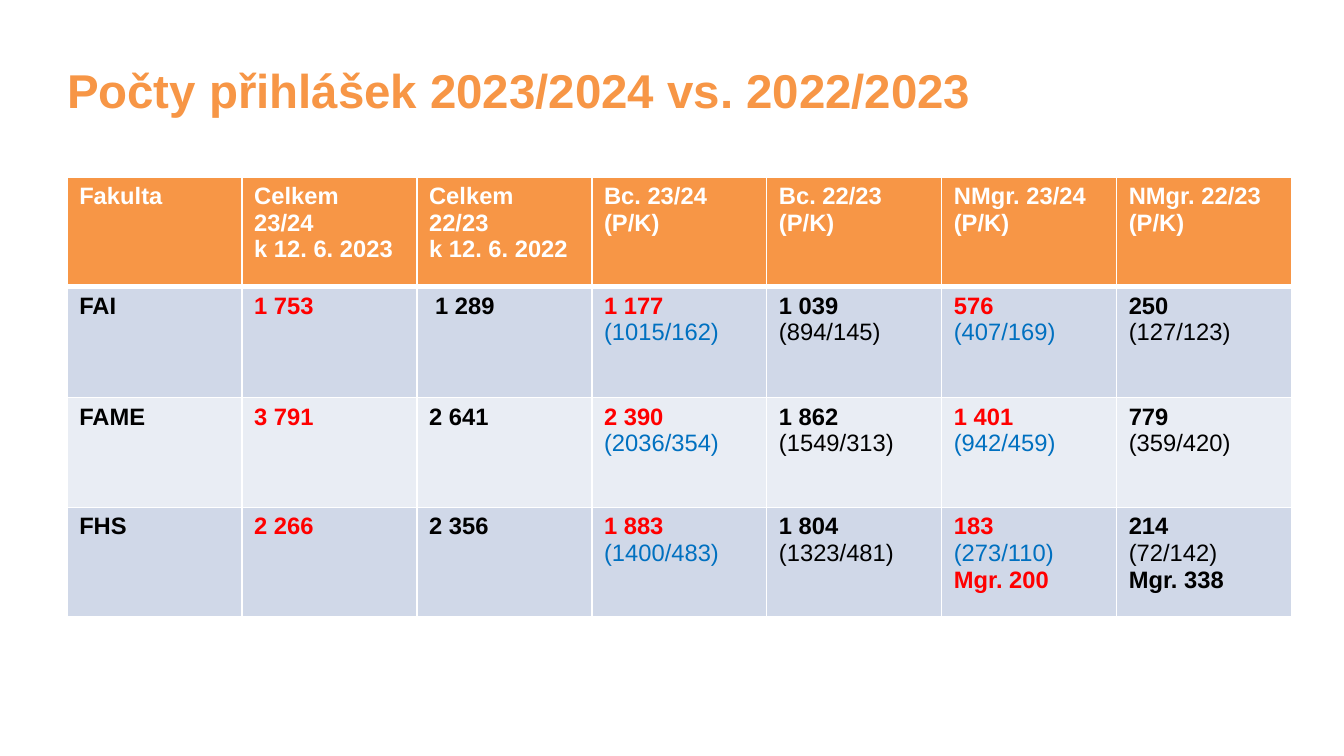
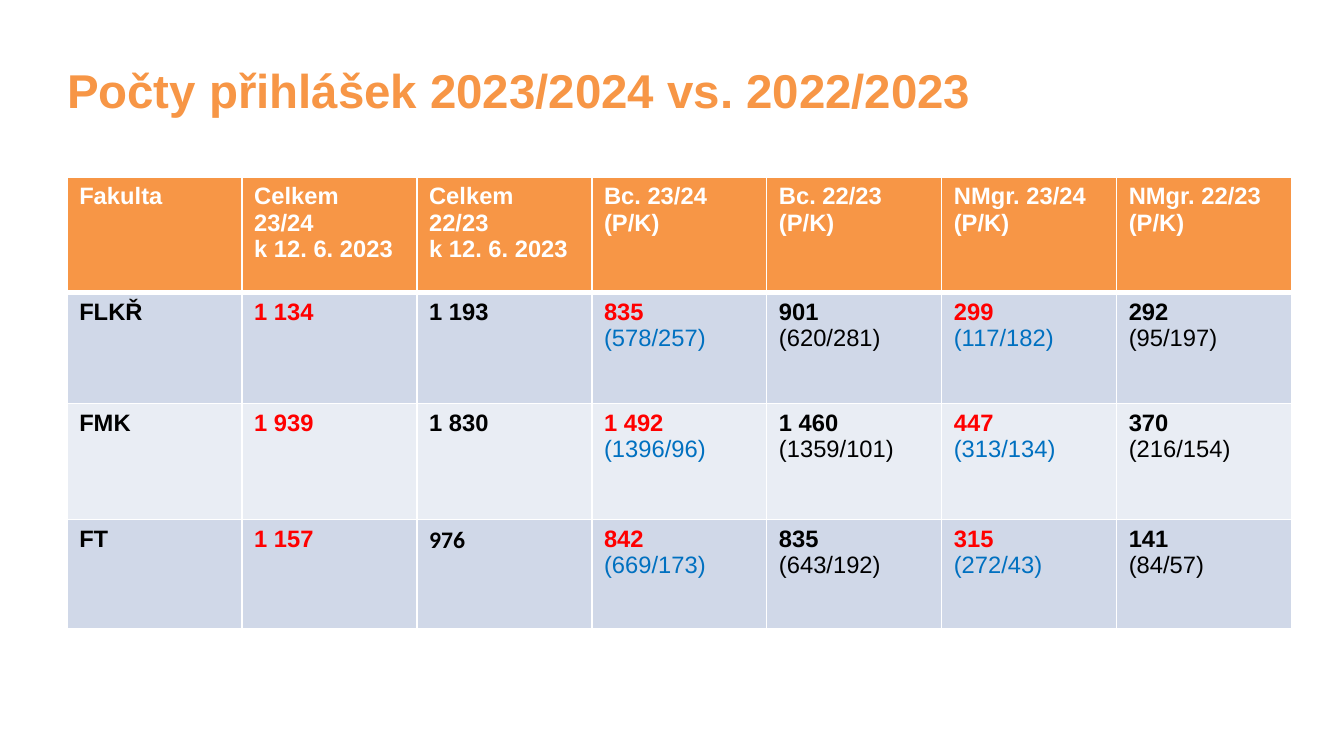
from lxml import etree
from pptx import Presentation
from pptx.dml.color import RGBColor
from pptx.enum.text import MSO_ANCHOR, MSO_AUTO_SIZE, PP_ALIGN
from pptx.oxml.ns import qn
from pptx.util import Inches, Pt

LEFT = PP_ALIGN.LEFT
TOP, MIDDLE = MSO_ANCHOR.TOP, MSO_ANCHOR.MIDDLE
GROW = MSO_AUTO_SIZE.SHAPE_TO_FIT_TEXT

# Shared look
SLIDE_W, SLIDE_H = 11.02, 6.2
MARGIN = 0.55
TITLE_BOX = (MARGIN, MARGIN, SLIDE_W - 2 * MARGIN, 0.42)
TABLE_ORIGIN = (MARGIN, 1.45)
TABLE_W = 10.04
ORANGE, WHITE, BLACK, RED, BLUE = "F79646", "FFFFFF", "000000", "FF0000", "0070C0"
BANDS = ("D0D8E8", "E9EDF4")
TITLE_FONT = {"name": "Arial", "size": Pt(28), "bold": True}
CELL_FONT = {"name": "Arial", "size": Pt(14), "bold": True}
THIN, THICK = 1, 3

# Content
TITLE = "Počty přihlášek 2023/2024 vs. 2022/2023"
PROGRAMMES = [f"{level} {year}\n(P/K)" for level in ("Bc.", "NMgr.")
              for year in ("23/24", "22/23")]
SLIDES = [
    {
        "previous_date": "k 12. 6. 2022",
        "heights": (0.9, 0.91, 0.9, 0.9),
        "faculties": [
            ("FAI", "1 753", "1 289", "1 177\n(1015/162)", "1 039\n(894/145)",
             "576\n(407/169)", "250\n(127/123)"),
            ("FAME", "3 791", "2 641", "2 390\n(2036/354)", "1 862\n(1549/313)",
             "1 401\n(942/459)", "779\n(359/420)"),
            ("FHS", "2 266", "2 356", "1 883\n(1400/483)", "1 804\n(1323/481)",
             "183\n(273/110)\nMgr. 200", "214\n(72/142)\nMgr. 338"),
        ],
        "indents": {(1, 2): 0.15},
        "fonts": {},
    },
    {
        "previous_date": "k 12. 6. 2023",
        "heights": (0.95, 0.91, 0.95, 0.9),
        "faculties": [
            ("FLKŘ", "1 134", "1 193", "835\n(578/257)", "901\n(620/281)",
             "299\n(117/182)", "292\n(95/197)"),
            ("FMK", "1 939", "1 830", "1 492\n(1396/96)", "1 460\n(1359/101)",
             "447\n(313/134)", "370\n(216/154)"),
            ("FT", "1 157", "976", "842\n(669/173)", "835\n(643/192)",
             "315\n(272/43)", "141\n(84/57)"),
        ],
        "indents": {},
        "fonts": {(3, 2): "Calibri"},
    },
]


def rgb(value):
    return RGBColor.from_string(value)


def set_font(font, style, colour):
    for attribute, value in style.items():
        setattr(font, attribute, value)
    font.color.rgb = rgb(colour)


def add_borders(cell, row):
    """Thin white rules, with a thick one under the header row."""
    widths = {
        "a:lnL": THIN,
        "a:lnR": THIN,
        "a:lnT": THICK if row == 1 else THIN,
        "a:lnB": THICK if row == 0 else THIN,
    }
    properties = cell._tc.get_or_add_tcPr()
    for side, width in widths.items():
        line = etree.SubElement(properties, qn(side), w=str(Pt(width)))
        fill = etree.SubElement(line, qn("a:solidFill"))
        etree.SubElement(fill, qn("a:srgbClr"), val=WHITE)


def place_title(slide, box):
    title = slide.shapes.title
    title.left, title.top, title.width, title.height = map(Inches, box)
    frame = title.text_frame
    frame.text = TITLE
    layout = {"margin_left": 0, "margin_top": 0, "margin_right": 0,
              "margin_bottom": 0, "vertical_anchor": MIDDLE,
              "word_wrap": True, "auto_size": GROW}
    for attribute, value in layout.items():
        setattr(frame, attribute, value)
    heading = frame.paragraphs[0]
    heading.alignment = LEFT
    heading.line_spacing = 0.9
    set_font(heading.runs[0].font, TITLE_FONT, ORANGE)


def line_style(text, row, column, font_name):
    """Current-year columns are red with blue splits; splits are not bold."""
    is_split = row > 0 and text.startswith("(")
    if row == 0:
        colour = WHITE
    elif column % 2:
        colour = BLUE if is_split else RED
    else:
        colour = BLACK
    return CELL_FONT | {"bold": not is_split, "name": font_name}, colour


def fill_cell(cell, text, row, column, font_name):
    add_borders(cell, row)
    cell.fill.solid()
    cell.fill.fore_color.rgb = rgb(BANDS[(row - 1) % 2] if row else ORANGE)
    cell.vertical_anchor = TOP
    cell.text_frame.text = text
    for paragraph in cell.text_frame.paragraphs:
        paragraph.alignment = LEFT
        style, colour = line_style(paragraph.text, row, column, font_name)
        set_font(paragraph.runs[0].font, style, colour)


def place_table(slide, origin, width, content):
    header = ("Fakulta", "Celkem 23/24\nk 12. 6. 2023",
              f"Celkem 22/23\n{content['previous_date']}", *PROGRAMMES)
    rows = [header, *content["faculties"]]
    heights = content["heights"]
    left, top = origin
    table = slide.shapes.add_table(
        len(rows), len(header), Inches(left), Inches(top),
        Inches(width), Inches(sum(heights))).table
    for column in table.columns:
        column.width = Inches(width / len(header))
    for r, (texts, height) in enumerate(zip(rows, heights)):
        table.rows[r].height = Inches(height)
        for c, text in enumerate(texts):
            font_name = content["fonts"].get((r, c), CELL_FONT["name"])
            fill_cell(table.cell(r, c), text, r, c, font_name)
    for (r, c), indent in content["indents"].items():
        table.cell(r, c).margin_left = Inches(indent)


def main():
    deck = Presentation()
    deck.slide_width, deck.slide_height = Inches(SLIDE_W), Inches(SLIDE_H)
    title_only = deck.slide_layouts[5]
    for content in SLIDES:
        slide = deck.slides.add_slide(title_only)
        place_title(slide, TITLE_BOX)
        place_table(slide, TABLE_ORIGIN, TABLE_W, content)
    deck.save("out.pptx")


if __name__ == "__main__":
    main()
